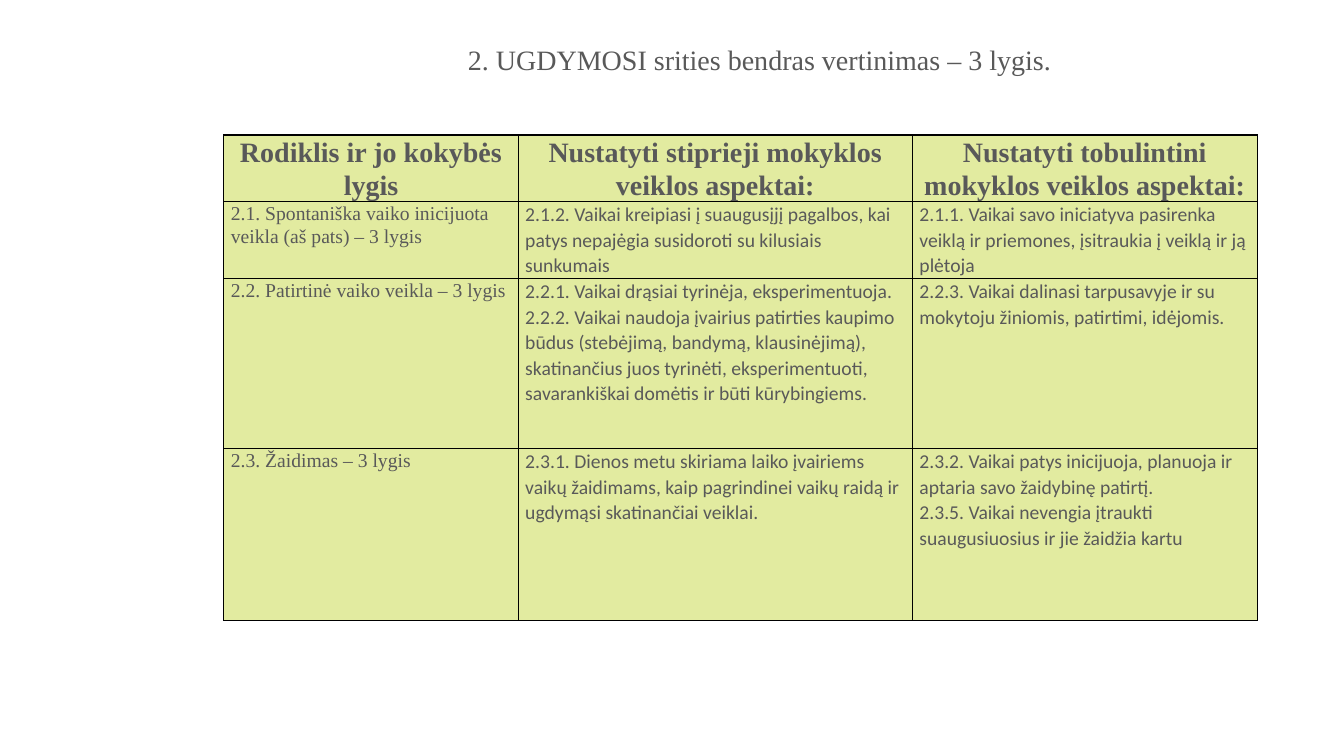
from lxml.etree import SubElement
from pptx import Presentation
from pptx.dml.color import RGBColor
from pptx.enum.text import MSO_ANCHOR, MSO_AUTO_SIZE, PP_ALIGN
from pptx.oxml.ns import qn
from pptx.util import Inches, Pt

COLORS = {"text": "595959", "cell": "E2EBA0", "border": "000000"}
SERIF, SANS = "Times New Roman", "Calibri"

TITLE = "2. UGDYMOSI srities bendras vertinimas – 3 lygis."
HEADINGS = [
    "Rodiklis ir jo kokybės lygis",
    "Nustatyti stiprieji mokyklos veiklos aspektai:",
    "Nustatyti tobulintini mokyklos veiklos aspektai:",
]
INDICATORS = [
    [
        "2.1. Spontaniška vaiko inicijuota veikla (aš pats) – 3 lygis",
        "2.1.2. Vaikai kreipiasi į suaugusįjį pagalbos, kai patys nepajėgia "
        "susidoroti su kilusiais sunkumais",
        "2.1.1. Vaikai savo iniciatyva pasirenka veiklą ir priemones, "
        "įsitraukia į veiklą ir ją plėtoja",
    ],
    [
        "2.2. Patirtinė vaiko veikla – 3 lygis",
        "2.2.1. Vaikai drąsiai tyrinėja, eksperimentuoja.\n"
        "2.2.2. Vaikai naudoja įvairius patirties kaupimo būdus (stebėjimą, "
        "bandymą, klausinėjimą), skatinančius juos tyrinėti, eksperimentuoti, "
        "savarankiškai domėtis ir būti kūrybingiems.",
        "2.2.3. Vaikai dalinasi tarpusavyje ir su mokytoju žiniomis, "
        "patirtimi, idėjomis.",
    ],
    [
        "2.3. Žaidimas – 3 lygis",
        "2.3.1. Dienos metu skiriama laiko įvairiems vaikų žaidimams, kaip "
        "pagrindinei vaikų raidą ir ugdymąsi skatinančiai veiklai.",
        "2.3.2. Vaikai patys inicijuoja, planuoja ir aptaria savo žaidybinę "
        "patirtį.\n"
        "2.3.5. Vaikai nevengia įtraukti suaugusiuosius ir jie žaidžia kartu",
    ],
]
COLUMN_WIDTHS = [2.92, 3.91, 3.42]
ROW_HEIGHTS = [0.66, 0.76, 1.69, 1.71]


class SlideBuilder:
    def __init__(self, width, height):
        self.deck = Presentation()
        self.deck.slide_width, self.deck.slide_height = Inches(width), Inches(height)
        self.slide = self.deck.slides.add_slide(self.deck.slide_layouts[5])

    def place(self, x, y, w, h):
        """Turn shares of the slide's size into lengths."""
        width, height = self.deck.slide_width, self.deck.slide_height
        return int(x * width), int(y * height), int(w * width), int(h * height)

    def format_text(self, frame, size, font, spacing, bold=False, align=PP_ALIGN.LEFT):
        for paragraph in frame.paragraphs:
            paragraph.alignment = align
            paragraph.line_spacing = spacing
            paragraph.font.size = Pt(size)
            paragraph.font.name = font
            paragraph.font.bold = bold
            paragraph.font.color.rgb = RGBColor.from_string(COLORS["text"])

    def title(self, text, area):
        heading = self.slide.shapes.title
        heading.left, heading.top, heading.width, heading.height = self.place(*area)
        frame = heading.text_frame
        frame.text = text
        frame.word_wrap = True
        frame.auto_size = MSO_AUTO_SIZE.NONE
        frame.vertical_anchor = MSO_ANCHOR.BOTTOM
        frame.margin_bottom = Inches(0.37)
        self.format_text(frame, 20, SERIF, 0.9, align=PP_ALIGN.CENTER)

    def outline(self, cell):
        """Draw a thin line on the four sides; call before filling the cell."""
        properties = cell._tc.get_or_add_tcPr()
        for side in ("a:lnL", "a:lnR", "a:lnT", "a:lnB"):
            line = SubElement(properties, qn(side), w=str(Pt(1)))
            fill = SubElement(line, qn("a:solidFill"))
            SubElement(fill, qn("a:srgbClr"), val=COLORS["border"])

    def cell(self, cell, text, is_heading, font):
        cell.text = text
        cell.margin_left = cell.margin_right = Inches(0.07)
        cell.margin_top = cell.margin_bottom = 0
        self.outline(cell)
        cell.fill.solid()
        cell.fill.fore_color.rgb = RGBColor.from_string(COLORS["cell"])
        if is_heading:
            cell.vertical_anchor = MSO_ANCHOR.MIDDLE
            self.format_text(cell.text_frame, 20, font, 1.07, True, PP_ALIGN.CENTER)
        else:
            cell.vertical_anchor = MSO_ANCHOR.TOP
            self.format_text(cell.text_frame, 14, font, 1.07)

    def table(self, rows, area, widths, heights):
        table = self.slide.shapes.add_table(
            len(rows), len(widths), *self.place(*area)).table
        table.first_row = table.horz_banding = False
        for column, width in zip(table.columns, widths):
            column.width = Inches(width)
        for row, height in zip(table.rows, heights):
            row.height = Inches(height)
        for r, texts in enumerate(rows):
            for c, text in enumerate(texts):
                font = SERIF if r == 0 or c == 0 else SANS
                self.cell(table.cell(r, c), text, r == 0, font)


def main():
    builder = SlideBuilder(13.33, 7.5)
    builder.title(TITLE, (2.41 / 13.33, 0.33 / 7.5, 10.25 / 13.33, 0.8 / 7.5))
    builder.table([HEADINGS, *INDICATORS],
                  (2.22 / 13.33, 1.34 / 7.5, 10.25 / 13.33, 4.82 / 7.5),
                  COLUMN_WIDTHS, ROW_HEIGHTS)
    builder.deck.save("out.pptx")


if __name__ == "__main__":
    main()
